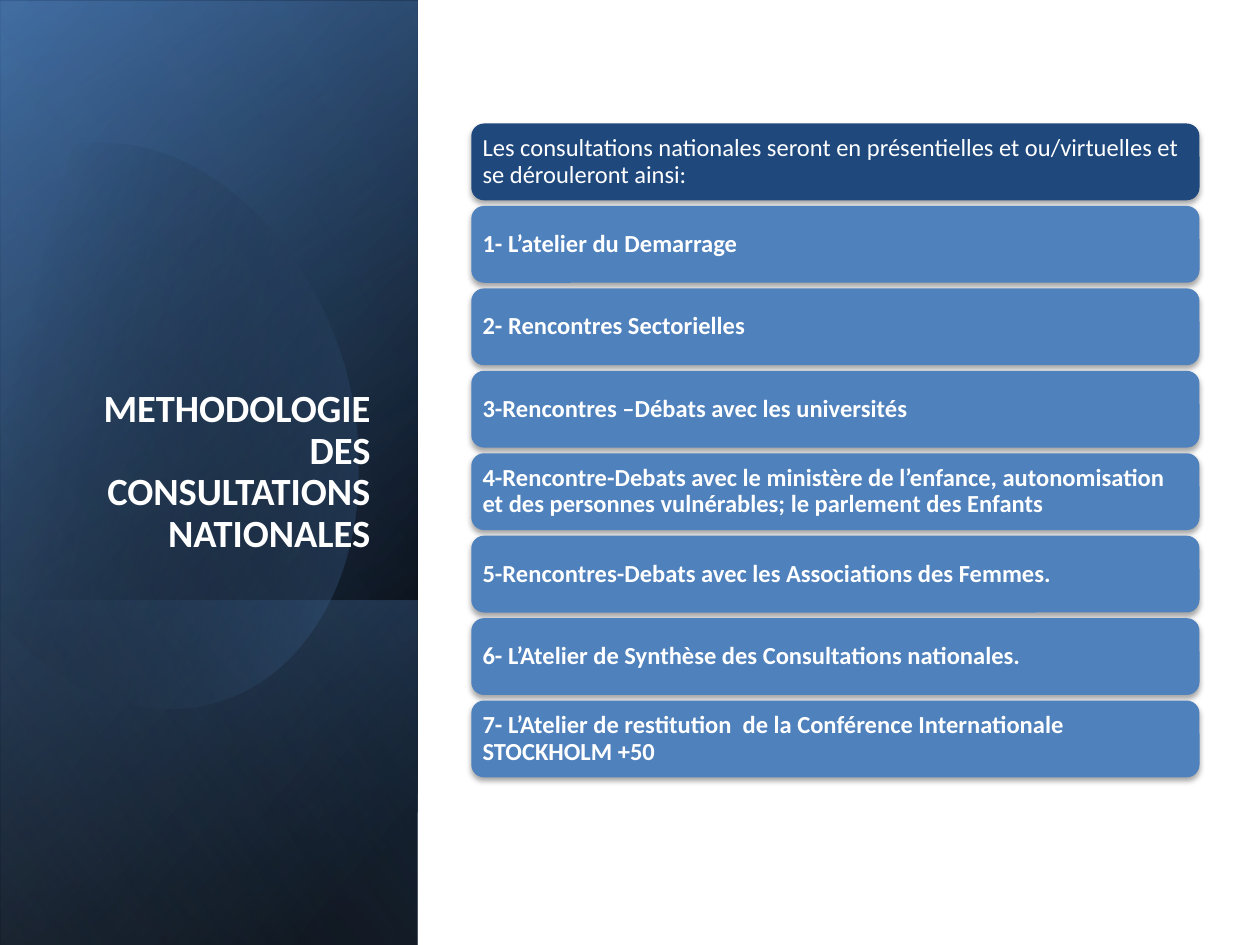
"""Builds the slide on the method of the national consultations."""
from math import cos, radians, sin

from lxml import etree
from pptx import Presentation
from pptx.dml.color import RGBColor
from pptx.enum.shapes import MSO_SHAPE
from pptx.enum.text import MSO_ANCHOR, MSO_AUTO_SIZE, PP_ALIGN
from pptx.oxml.ns import qn
from pptx.util import Inches, Pt


def color(value):
    return RGBColor.from_string(value)


def paint_gradient(shape, stops, angle):
    shape.shadow.inherit = False
    shape.line.fill.background()
    shape.fill.background()
    properties = shape._element.spPr
    gradient = etree.Element(qn("a:gradFill"), rotWithShape="1")
    stop_list = etree.SubElement(gradient, qn("a:gsLst"))
    for position, value, opacity in stops:
        stop = etree.SubElement(stop_list, qn("a:gs"), pos=str(position * 1000))
        tone = etree.SubElement(stop, qn("a:srgbClr"), val=str(color(value)))
        if opacity < 100:
            etree.SubElement(tone, qn("a:alpha"), val=str(opacity * 1000))
    etree.SubElement(gradient, qn("a:lin"), ang=str(angle * 60000), scaled="0")
    properties.replace(properties.find(qn("a:noFill")), gradient)


deck = Presentation()
deck.slide_width, deck.slide_height = Inches(10), Inches(7.5)
page = deck.slides.add_slide(deck.slide_layouts[5])
tree = page.shapes._spTree

pane_rows = [
    ((-2.1, 2.09, 7.52, 3.31), [(8, "000000", 100), (100, "376092", 100)], 50),
    ((-2.09, 2.11, 7.5, 3.31), [(0, "000000", 0), (99, "4F81BD", 46)], 30),
    ((0.29, 4.48, 2.74, 3.31), [(2, "4F81BD", 29), (100, "000000", 30)], 130),
    ((-2.09, 2.09, 7.5, 3.31), [(0, "000000", 0), (99, "95B3D7", 11)], 120),
]
for bounds, stops, angle in pane_rows:
    pane = page.shapes.add_shape(MSO_SHAPE.RECTANGLE, *map(Inches, bounds))
    paint_gradient(pane, stops, angle)
    pane.rotation = 90
    pane._element.spPr.find(qn("a:xfrm")).set("flipH", "1")

left, top, width, height = -0.41, 1.06, 3.2, 4.57
builder = page.shapes.build_freeform(Inches(left), Inches(top))
builder.add_line_segments([(Inches(left + width), Inches(top + height))], close=False)
oval = builder.convert_to_shape()
tilt = 16.1
turn = radians(tilt)
center_x, center_y = left + width / 2, top + height / 2
oval_steps = [
    ("moveTo", [(0.96, 1.14)]),
    ("cubicBezTo", [(1.71, 1.22), (2.44, 1.92), (2.73, 2.9)]),
    ("cubicBezTo", [(3.07, 4.12), (2.62, 5.31), (1.71, 5.57)]),
    ("cubicBezTo", [(1.14, 5.74), (0.53, 5.5), (0.07, 5)]),
    ("lnTo", [(-0.03, 4.88)]),
    ("lnTo", [(-0.25, 1.66)]),
    ("lnTo", [(-0.15, 1.54)]),
    ("cubicBezTo", [(0.02, 1.37), (0.22, 1.25), (0.45, 1.18)]),
    ("cubicBezTo", [(0.62, 1.13), (0.79, 1.12), (0.96, 1.14)]),
    ("close", []),
]
outline = next(oval._element.iter(qn("a:path")))
for segment in list(outline):
    outline.remove(segment)
for command, points in oval_steps:
    segment = etree.SubElement(outline, qn(f"a:{command}"))
    for x, y in points:
        across, down = x - center_x, y - center_y
        local_x = width / 2 + across * cos(turn) - down * sin(turn)
        local_y = height / 2 + across * sin(turn) + down * cos(turn)
        etree.SubElement(segment, qn("a:pt"), x=str(Inches(local_x)), y=str(Inches(local_y)))
oval.rotation = 360 - tilt
paint_gradient(oval, [(29, "000000", 0), (100, "4F81BD", 43)], 30)
tree.append(pane._element)

title = page.shapes.title
tree.append(title._element)
title.left, title.top = Inches(0.48), Inches(1.84)
title.width, title.height = Inches(2.56), Inches(2.62)
title.text_frame.auto_size = MSO_AUTO_SIZE.NONE
title.text_frame.word_wrap = True
title.text_frame.vertical_anchor = MSO_ANCHOR.BOTTOM
para = title.text_frame.paragraphs[0]
para.alignment = PP_ALIGN.RIGHT
para.line_spacing = 0.9
span = para.add_run()
span.text = "METHODOLOGIE DES CONSULTATIONS NATIONALES"
span.font.name, span.font.size, span.font.bold = "Calibri", Pt(22), True
span.font.color.rgb = color("FFFFFF")

steps = [
    "Les consultations nationales seront en présentielles et ou/virtuelles et se dérouleront ainsi:",
    "1- L’atelier du Demarrage",
    "2- Rencontres Sectorielles",
    "3-Rencontres –Débats avec les universités",
    "4-Rencontre-Debats avec le ministère de l’enfance, autonomisation et des personnes "
    "vulnérables; le parlement des Enfants",
    "5-Rencontres-Debats avec les Associations des Femmes.",
    "6- L’Atelier de Synthèse des Consultations nationales.",
    "7- L’Atelier de restitution  de la Conférence Internationale STOCKHOLM +50",
]
first_top, last_top = 0.98, 5.56
pitch = (last_top - first_top) / (len(steps) - 1)
for index, wording in enumerate(steps):
    tile_top = first_top + index * pitch
    tile = page.shapes.add_shape(MSO_SHAPE.ROUNDED_RECTANGLE, Inches(3.74), Inches(tile_top),
                                 Inches(5.78), Inches(0.61))
    tile.fill.solid()
    tile.fill.fore_color.rgb = color("4F81BD" if index else "1F497D")
    tile.line.fill.background()
    tile.shadow.inherit = False
    effects = tile._element.spPr.find(qn("a:effectLst"))
    shade = etree.SubElement(effects, qn("a:outerShdw"), blurRad=str(Pt(3.1)),
                             dist=str(Pt(1.8)), dir="5400000", rotWithShape="0")
    tone = etree.SubElement(shade, qn("a:srgbClr"), val=str(color("000000")))
    etree.SubElement(tone, qn("a:alpha"), val="35000")

    box = page.shapes.add_textbox(Inches(3.77), Inches(tile_top + 0.03), Inches(5.72), Inches(0.55))
    frame = box.text_frame
    frame.word_wrap = True
    frame.vertical_anchor = MSO_ANCHOR.MIDDLE
    frame.margin_left = frame.margin_right = Inches(0.06)
    frame.margin_top = frame.margin_bottom = Inches(0.06)
    para = frame.paragraphs[0]
    para.alignment = PP_ALIGN.LEFT
    para.line_spacing = 0.9
    span = para.add_run()
    span.text = wording
    span.font.name, span.font.size, span.font.bold = "Calibri", Pt(14), index > 0
    span.font.color.rgb = color("FFFFFF")

deck.save("out.pptx")
